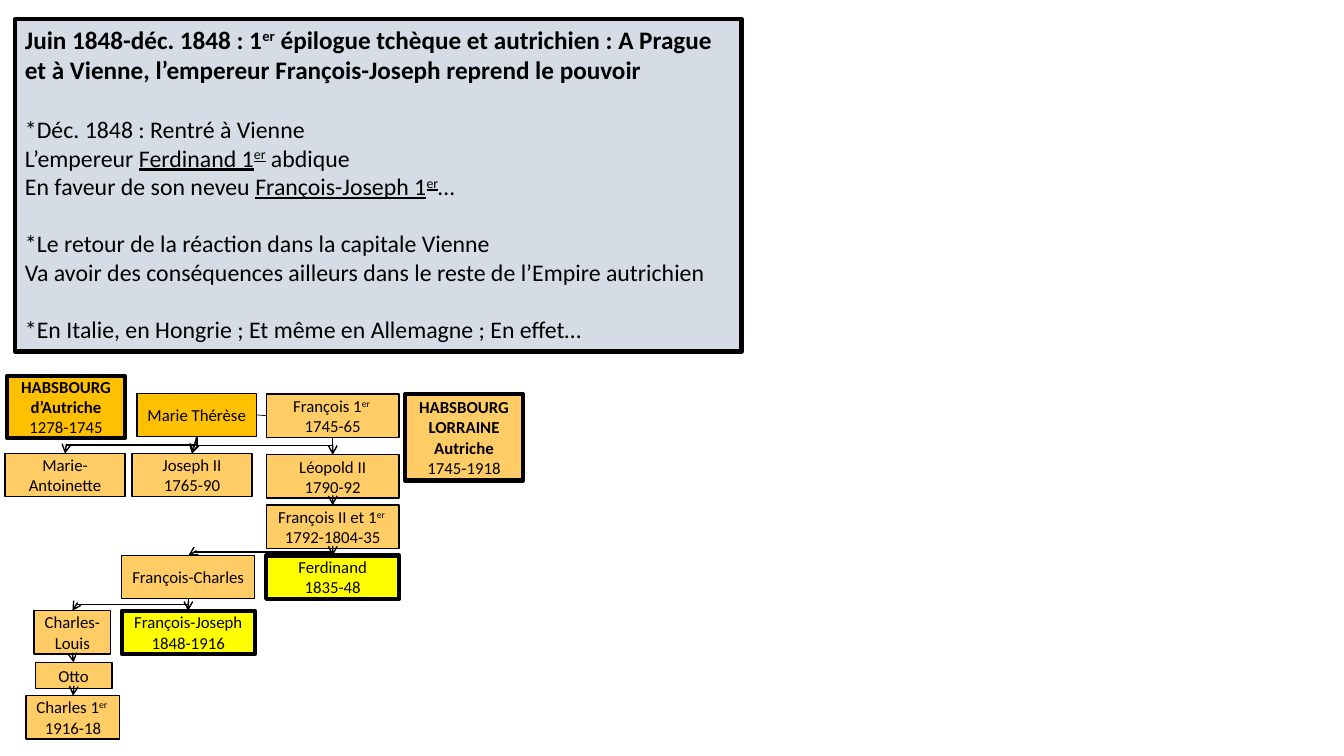
from dataclasses import dataclass

from lxml.etree import SubElement
from pptx import Presentation
from pptx.dml.color import RGBColor
from pptx.enum.shapes import MSO_CONNECTOR, MSO_SHAPE
from pptx.enum.text import MSO_ANCHOR, MSO_AUTO_SIZE, PP_ALIGN
from pptx.oxml.ns import qn
from pptx.util import Cm, Pt


@dataclass(frozen=True)
class Theme:
    font: str = "Calibri"
    ink: str = "000000"
    panel: str = "D6DCE5"
    habsburg: str = "FFC000"
    lorraine: str = "FFCC66"
    emperor: str = "FFFF00"
    heading: float = 18
    body: float = 17
    label: float = 12
    hair: float = 0.5
    thin: float = 1
    thick: float = 3


THEME = Theme()
TOP, LEFT, BOTTOM, RIGHT = range(4)

# Span styles: b = bold, u = underlined, s = superscript
STORY = [
    # (gap before in points, size, spans)
    (0, THEME.heading, [
        ("Juin 1848-déc. 1848 : 1", "b"), ("er", "bs"),
        (" épilogue tchèque et autrichien : A Prague et à Vienne, "
         "l’empereur François-Joseph reprend le pouvoir", "b")]),
    (21.6, THEME.body, [("*Déc. 1848 : Rentré à Vienne", "")]),
    (0, THEME.body, [("L’empereur ", ""), ("Ferdinand 1", "u"),
                     ("er", "us"), (" abdique", "")]),
    (0, THEME.body, [("En faveur de son neveu ", ""),
                     ("François-Joseph 1", "u"), ("er", "us"), ("…", "")]),
    (20.5, THEME.body,
     [("*Le retour de la réaction dans la capitale Vienne", "")]),
    (0, THEME.body, [("Va avoir des conséquences ailleurs dans le reste "
                      "de l’Empire autrichien", "")]),
    (20.5, THEME.body, [("*En Italie, en Hongrie ; Et même en Allemagne ; "
                         "En effet…", "")]),
]

# Family members: left, top, width, height in cm inside the tree; fill; line; paragraphs
WIDE, MID, TALL = 3.35, 3.02, 1.09
MAIN, SECOND = 6.58, 2.94
LORRAINE, THIN, THICK = THEME.lorraine, THEME.thin, THEME.thick
MEMBERS = {
    "marie_therese": (3.32, 0.44, MID, TALL, THEME.habsburg, THIN,
                      [[("Marie Thérèse", "")]]),
    "francois_1": (MAIN, 0.46, WIDE, TALL, LORRAINE, THIN,
                   [[("François 1", ""), ("er ", "s")], [("1745-65", "")]]),
    "joseph_2": (3.2, 1.96, MID, TALL, LORRAINE, THIN,
                 [[("Joseph II", "")], [("1765-90", "")]]),
    "leopold_2": (MAIN, 1.99, WIDE, TALL, LORRAINE, THIN,
                  [[("Léopold II", "")], [("1790-92", "")]]),
    "francois_2": (MAIN, 3.26, WIDE, TALL, LORRAINE, THIN,
                   [[("François II et 1", ""), ("er ", "s")],
                    [("1792-1804-35", "")]]),
    "marie_antoinette": (0, 1.96, MID, TALL, LORRAINE, THIN,
                         [[("Marie-Antoinette", "")]]),
    "house_lorraine": (10.08, 0.46, 2.97, 2.18, LORRAINE, THICK,
                       [[("HABSBOURG", "b")], [("LORRAINE Autriche", "b")],
                        [("1745-1918", "")]]),
    "house_austria": (0.05, 0, 2.97, 1.57, THEME.habsburg, THICK,
                      [[("HABSBOURG d’Autriche", "b")], [("1278-1745", "")]]),
    "ferdinand": (MAIN, 4.53, WIDE, TALL, THEME.emperor, THICK,
                  [[("Ferdinand", "")], [("1835-48", "")]]),
    "francois_charles": (SECOND, 4.53, WIDE, TALL, LORRAINE, THIN,
                         [[("François-Charles", "")]]),
    "francois_joseph": (SECOND, 5.92, WIDE, TALL, THEME.emperor, THICK,
                        [[("François-Joseph", "")], [("1848-1916", "")]]),
    "charles_louis": (0.73, 5.92, 1.93, TALL, LORRAINE, THIN,
                      [[("Charles-Louis", "")]]),
    "otto": (0.76, 7.22, 1.93, 0.66, LORRAINE, THIN, [[("Otto", "")]]),
    "charles_1": (0.53, 8.06, 2.36, TALL, LORRAINE, THIN,
                  [[("Charles 1", ""), ("er ", "s")], [("1916-18", "")]]),
}
DIRECT = [("marie_therese", "joseph_2"), ("francois_1", "leopold_2"),
          ("leopold_2", "francois_2"), ("francois_2", "ferdinand"),
          ("francois_charles", "francois_joseph"),
          ("charles_louis", "otto"), ("otto", "charles_1")]
BENT = [("francois_1", "joseph_2"), ("marie_therese", "marie_antoinette"),
        ("francois_2", "francois_charles"),
        ("francois_charles", "charles_louis")]


def add_box(page, left, top, width, height, fill, weight):
    box = page.shapes.add_shape(MSO_SHAPE.RECTANGLE, left, top, width, height)
    box.shadow.inherit = False
    box.fill.solid()
    box.fill.fore_color.rgb = RGBColor.from_string(fill)
    box.line.color.rgb = RGBColor.from_string(THEME.ink)
    box.line.width = Pt(weight)
    box.text_frame.word_wrap = True
    return box


def add_para(box, index, spans, size, align, gap=0):
    frame = box.text_frame
    para = frame.add_paragraph() if index else frame.paragraphs[0]
    para.alignment = align
    para.space_before = Pt(gap)
    for text, style in spans:
        span = para.add_run()
        span.text = text
        font = span.font
        font.name, font.size = THEME.font, Pt(size)
        font.color.rgb = RGBColor.from_string(THEME.ink)
        font.bold, font.underline = "b" in style, "u" in style
        if "s" in style:
            font._element.set("baseline", "30000")


def style_line(line, weight, arrow=True):
    line.line.color.rgb = RGBColor.from_string(THEME.ink)
    line.line.width = Pt(weight)
    if arrow:
        SubElement(line.line._get_or_add_ln(), qn("a:tailEnd"), type="arrow")
    SubElement(line._element.spPr, qn("a:effectLst"))


def join_straight(page, start, start_side, end, end_side):
    line = page.shapes.add_connector(MSO_CONNECTOR.STRAIGHT, 0, 0, 0, 0)
    line.begin_connect(start, start_side)
    line.end_connect(end, end_side)
    return line


def join_bent(page, parent, child):
    """Elbow from the parent's bottom down and left to the child's top."""
    x1, y1 = parent.left + parent.width // 2, parent.top + parent.height
    x2, y2 = child.left + child.width // 2, child.top
    mid_x, mid_y = (x1 + x2) // 2, (y1 + y2) // 2
    half_drop, half_run = (y2 - y1) // 2, (x1 - x2) // 2
    # A quarter turn makes the elbow leave and arrive vertically
    line = page.shapes.add_connector(
        MSO_CONNECTOR.ELBOW, mid_x - half_drop, mid_y - half_run,
        mid_x + half_drop, mid_y + half_run)
    line._element.spPr.find(qn("a:xfrm")).set("rot", "5400000")
    return line


def draw_story(page, left, top, width, height):
    box = add_box(page, left, top, width, height, THEME.panel, THEME.thick)
    box.text_frame.vertical_anchor = MSO_ANCHOR.TOP
    box.text_frame.auto_size = MSO_AUTO_SIZE.SHAPE_TO_FIT_TEXT
    for index, (gap, size, spans) in enumerate(STORY):
        add_para(box, index, spans, size, PP_ALIGN.LEFT, gap)


def draw_family_tree(page, left, top):
    # People and houses
    boxes = {}
    for name, (x, y, width, height, fill, weight, paras) in MEMBERS.items():
        box = add_box(page, left + Cm(x), top + Cm(y), Cm(width), Cm(height),
                      fill, weight)
        box.text_frame.vertical_anchor = MSO_ANCHOR.MIDDLE
        for index, spans in enumerate(paras):
            add_para(box, index, spans, THEME.label, PP_ALIGN.CENTER)
        boxes[name] = box

    # Marriage
    marriage = join_straight(page, boxes["marie_therese"], RIGHT,
                             boxes["francois_1"], LEFT)
    style_line(marriage, THEME.hair, arrow=False)

    # Descent
    for parent, child in DIRECT:
        style_line(join_straight(page, boxes[parent], BOTTOM,
                                 boxes[child], TOP), THEME.thin)
    for parent, child in BENT:
        style_line(join_bent(page, boxes[parent], boxes[child]), THEME.thin)


def main():
    deck = Presentation()
    deck.slide_width, deck.slide_height = Cm(33.87), Cm(19.05)
    page = deck.slides.add_slide(deck.slide_layouts[6])
    draw_story(page, Cm(0.38), Cm(0.48), Cm(18.31), Cm(8.38))
    draw_family_tree(page, Cm(0.13), Cm(9.47))
    deck.save("out.pptx")


if __name__ == "__main__":
    main()
